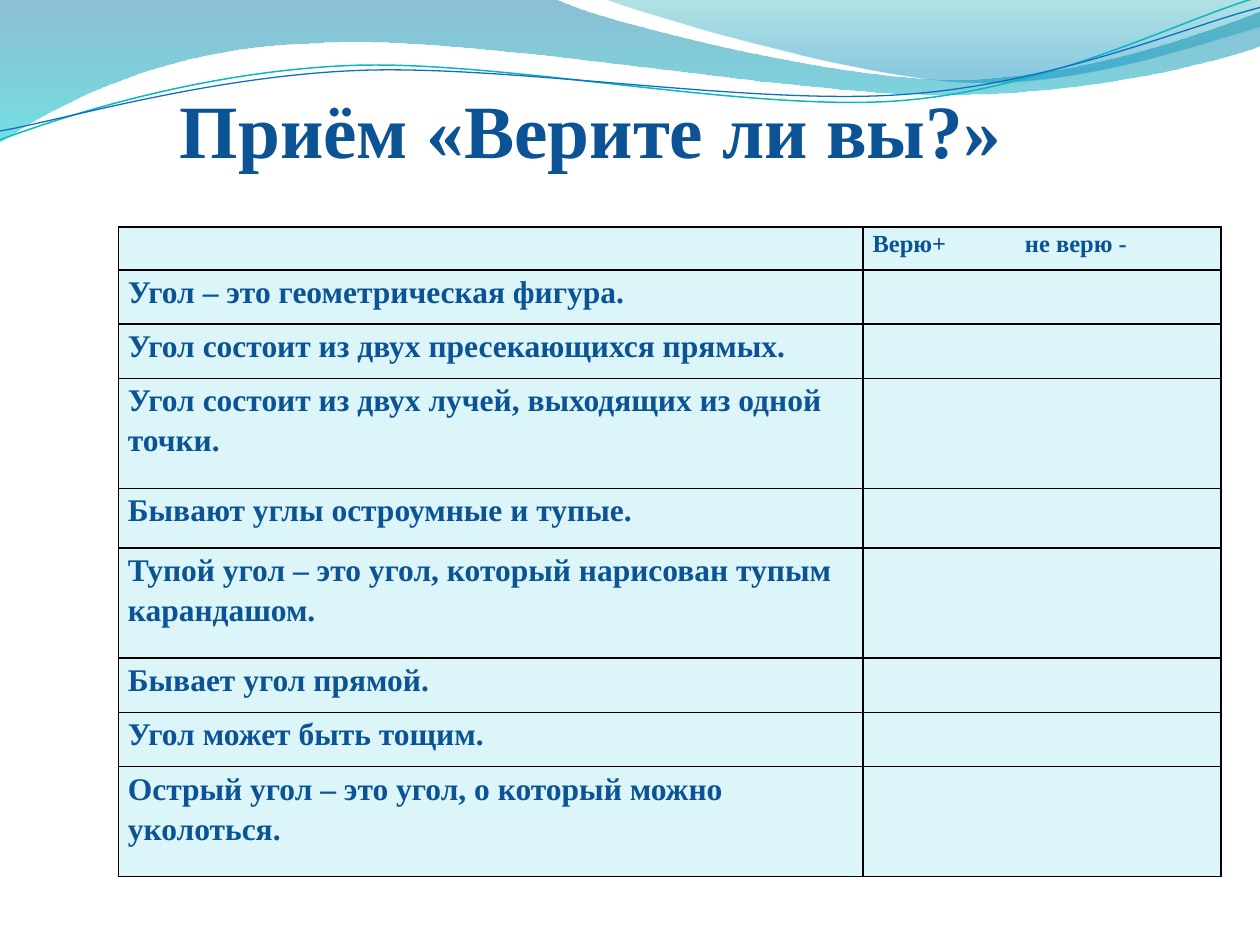
import dataclasses
import math

import pptx
import pptx.dml.color
import pptx.enum.text
import pptx.oxml.ns
import pptx.util
from lxml import etree

Inches, Pt = pptx.util.Inches, pptx.util.Pt
qn = pptx.oxml.ns.qn


@dataclasses.dataclass(frozen=True)
class Theme:
    font: str = "Times New Roman"
    text: str = "0B5394"
    cell: str = "DBF5F9"
    border: str = "000000"
    title_size: int = 43
    body_size: int = 18
    header_size: int = 14
    teal_line: str = "0AB8BF"
    blue_line: str = "0F6FC6"
    # Gradient stops: position in percent, colour, opacity in percent
    wide_wave: tuple = ((0, "0074A1", 45), (100, "00C6CF", 55))
    right_wave: tuple = ((0, "00A1A9", 30), (80, "008BBF", 45))


THEME = Theme()

# Outlines in inches: two numbers are a straight step, six a Bézier curve.
WIDE_WAVE = [
    (0, 0), (4.4, -0.01),
    (4.76, 0.17, 6.64, 0.63, 7.58, 0.63), (8.53, 0.63, 9.58, 0.26, 10, 0.09),
    (10.01, 0.36),
    (9.83, 0.44, 8.7, 0.76, 7.46, 0.75), (6.22, 0.75, 3.82, 0.28, 2.57, 0.34),
    (1.29, 0.36, 0.46, 0.83, -0.01, 1.13),
]
RIGHT_WAVE = [
    (4.79, -0.01),
    (5.09, 0.11, 6.82, 0.62, 7.69, 0.65), (8.56, 0.69, 9.61, 0.32, 10, 0.21),
    (10, 0),
]
TEAL_CURVE = [
    (0, 1.11),
    (0.48, 0.93, 1.58, 0.57, 2.77, 0.52), (3.95, 0.47, 5.93, 0.89, 7.13, 0.8),
    (8.33, 0.71, 9.38, 0.15, 9.98, -0.02),
]
BLUE_CURVE = [
    (0, 1.04),
    (0.47, 0.96, 1.64, 0.61, 2.83, 0.56), (4.03, 0.51, 5.97, 0.84, 7.17, 0.75),
    (8.36, 0.67, 9.41, 0.21, 10, 0.06),
]
CURVE_TILT = -2.7
TEAL_CENTER = (4.99, 0.58)
BLUE_CENTER = (5, 0.59)

HEADER = "Верю+\tне верю -"
HEADER_TAB = 1.21
HEADER_HEIGHT = 0.34
STATEMENTS = [
    ("Угол – это геометрическая фигура.", 0.43),
    ("Угол состоит из двух пресекающихся прямых.", 0.43),
    ("Угол состоит из двух лучей, выходящих из одной точки.", 0.87),
    ("Бывают углы остроумные и тупые.", 0.47),
    ("Тупой угол – это угол, который нарисован тупым карандашом.", 0.87),
    ("Бывает угол прямой.", 0.43),
    ("Угол может быть тощим.", 0.43),
    ("Острый угол – это угол, о который можно уколоться.", 0.87),
]
STATEMENT_WIDTH = 5.91


def rgb(value):
    return pptx.dml.color.RGBColor.from_string(value)


def style(paragraph, size):
    font = paragraph.font
    font.name, font.size, font.bold = THEME.font, Pt(size), True
    font.color.rgb = rgb(THEME.text)


def pairs(step):
    return list(zip(step[::2], step[1::2]))


def turn(step, center, degrees):
    """Turn the points of one outline step clockwise about a center."""
    cos, sin = math.cos(math.radians(degrees)), math.sin(math.radians(degrees))
    turned = []
    for x, y in pairs(step):
        dx, dy = x - center[0], y - center[1]
        turned += [center[0] + dx * cos - dy * sin, center[1] + dx * sin + dy * cos]
    return tuple(turned)


def add_outline(slide, left, top, outline, close):
    """Add a freeform, joining the three points of each curved step as a Bézier."""
    points = [(left + Inches(x), top + Inches(y)) for step in outline for x, y in pairs(step)]
    builder = slide.shapes.build_freeform(*points[0])
    builder.add_line_segments(points[1:], close=close)
    shape = builder.convert_to_shape()
    shape.shadow.inherit = False
    segments = iter(list(shape.element.iter(qn("a:lnTo"))))
    for step in outline[1:]:
        parts = [next(segments) for _ in pairs(step)]
        if len(parts) == 3:
            curve = etree.Element(qn("a:cubicBezTo"))
            parts[0].addprevious(curve)
            for part in parts:
                curve.append(part[0])
                part.getparent().remove(part)
    return shape


def add_wave(slide, left, top, outline, stops):
    wave = add_outline(slide, left, top, outline, close=True)
    wave.line.fill.background()
    wave.fill.gradient()
    wave.fill.gradient_angle = 270
    for stop, (position, color, _) in zip(wave.fill.gradient_stops, stops):
        stop.position = position / 100
        stop.color.rgb = rgb(color)
    for node, (_, _, opacity) in zip(wave.element.iter(qn("a:srgbClr")), stops):
        etree.SubElement(node, qn("a:alpha"), val=str(opacity * 1000))


def add_curve(slide, left, top, outline, center, color, width):
    level = [turn(step, center, -CURVE_TILT) for step in outline]
    curve = add_outline(slide, left, top, level, close=False)
    curve.rotation = CURVE_TILT
    curve.fill.background()
    curve.line.color.rgb = rgb(color)
    curve.line.width = Pt(width)


def add_wave_header(slide, left, top):
    add_wave(slide, left, top, WIDE_WAVE, THEME.wide_wave)
    add_wave(slide, left, top, RIGHT_WAVE, THEME.right_wave)
    add_curve(slide, left, top, TEAL_CURVE, TEAL_CENTER, THEME.teal_line, 0.85)
    add_curve(slide, left, top, BLUE_CURVE, BLUE_CENTER, THEME.blue_line, 0.75)


def add_title(slide, left, top, width, height):
    frame = slide.shapes.add_textbox(left, top, width, height).text_frame
    frame.word_wrap = True
    frame.vertical_anchor = pptx.enum.text.MSO_ANCHOR.MIDDLE
    title = frame.paragraphs[0]
    title.text = "Приём «Верите ли вы?»"
    style(title, THEME.title_size)


def format_cell(cell):
    cell.margin_left = cell.margin_right = Pt(5.4)
    cell.margin_top = cell.margin_bottom = 0
    properties = cell._tc.get_or_add_tcPr()
    for side in ("a:lnL", "a:lnR", "a:lnT", "a:lnB"):
        border = etree.SubElement(properties, qn(side), w=str(Pt(1)))
        paint = etree.SubElement(border, qn("a:solidFill"))
        etree.SubElement(paint, qn("a:srgbClr"), val=THEME.border)
    cell.fill.solid()
    cell.fill.fore_color.rgb = rgb(THEME.cell)


def write_cell(cell, text, size, tab=None):
    paragraph = cell.text_frame.paragraphs[0]
    paragraph.text = text
    paragraph.line_spacing = 1.15
    if tab is not None:
        tabs = etree.SubElement(paragraph._p.get_or_add_pPr(), qn("a:tabLst"))
        etree.SubElement(tabs, qn("a:tab"), pos=str(Inches(tab)), algn="l")
    style(paragraph, size)


def add_statement_table(slide, left, top, width, height):
    shares = [HEADER_HEIGHT] + [share for _, share in STATEMENTS]
    table = slide.shapes.add_table(len(shares), 2, left, top, width, height).table
    table.first_row = table.horz_banding = False
    table.columns[0].width = Inches(STATEMENT_WIDTH)
    table.columns[1].width = width - table.columns[0].width
    for row, share in zip(table.rows, shares):
        row.height = int(height * share / sum(shares))
    for cell in table.iter_cells():
        format_cell(cell)
    write_cell(table.cell(0, 1), HEADER, THEME.header_size, HEADER_TAB)
    for index, (statement, _) in enumerate(STATEMENTS, start=1):
        write_cell(table.cell(index, 0), statement, THEME.body_size)


def main():
    deck = pptx.Presentation()
    deck.slide_width, deck.slide_height = Inches(10), Inches(7.5)
    slide = deck.slides.add_slide(deck.slide_layouts[6])
    add_wave_header(slide, 0, 0)
    add_statement_table(slide, Inches(0.94), Inches(1.8), Inches(8.75), Inches(5.16))
    add_title(slide, Inches(1.33), Inches(0.39), Inches(8.2), Inches(1.25))
    deck.save("out.pptx")


if __name__ == "__main__":
    main()
